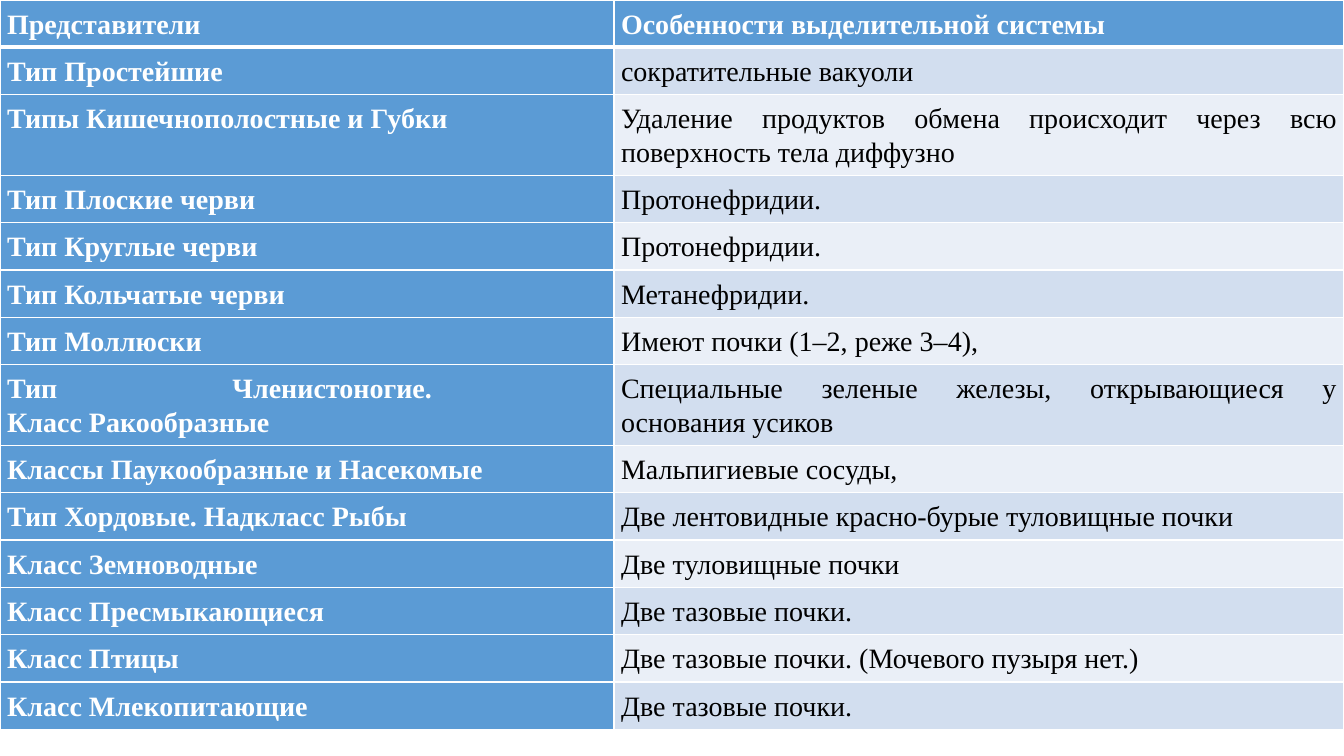
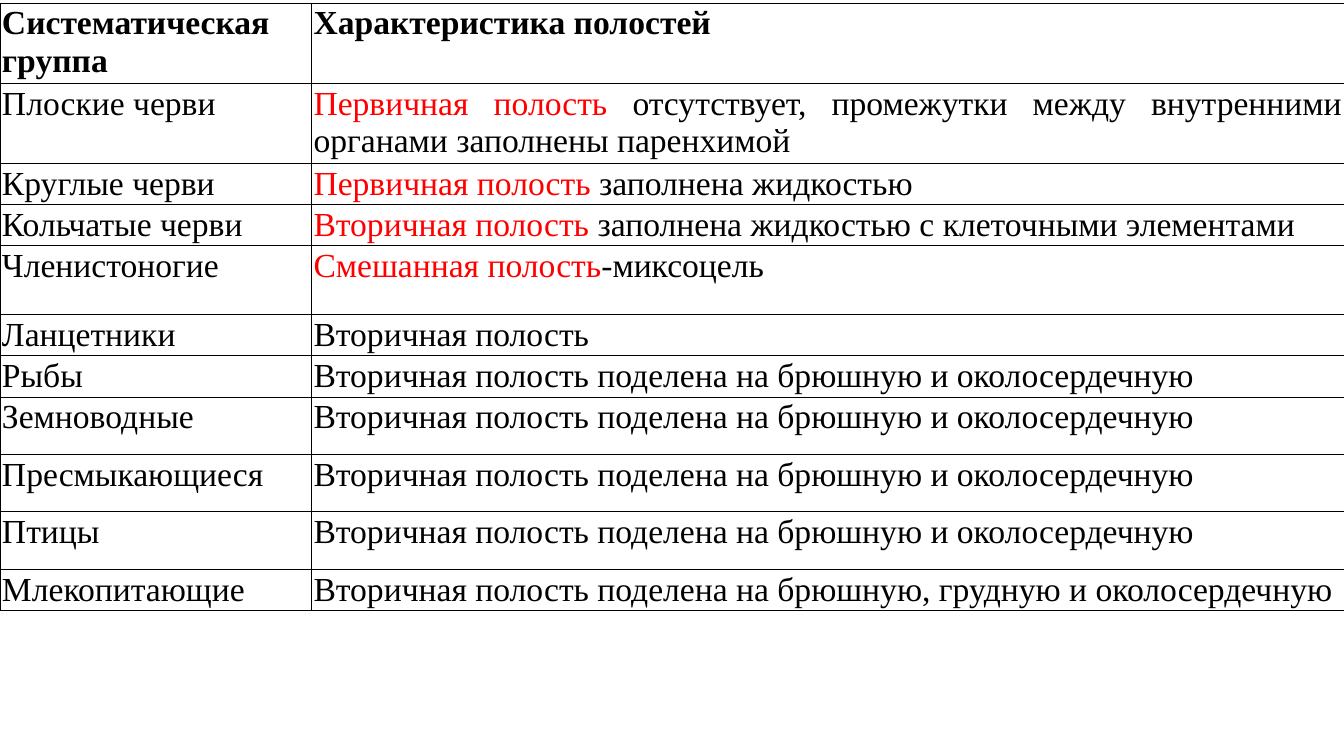
from lxml import etree
from pptx import Presentation
from pptx.dml.color import RGBColor
from pptx.enum.text import PP_ALIGN
from pptx.oxml.ns import qn
from pptx.util import Emu, Pt

EMU_PER_PX = 9144  # 100 px to the inch
SLIDE_WIDTH, SLIDE_HEIGHT = 1333, 750
FONT = "Times New Roman"
LEFT, JUSTIFY = PP_ALIGN.LEFT, PP_ALIGN.JUSTIFY

WHITE = RGBColor(0xFF, 0xFF, 0xFF)
BLACK = RGBColor(0x00, 0x00, 0x00)
RED = RGBColor(0xFF, 0x00, 0x00)
BLUE = RGBColor(0x5B, 0x9B, 0xD5)
BANDS = (RGBColor(0xD2, 0xDE, 0xEF), RGBColor(0xEA, 0xEF, 0xF7))

ONE_LINE, TWO_LINES = 47, 80
EXCRETION = [
    ("Представители", "Особенности выделительной системы", ONE_LINE),
    ("Тип Простейшие", "сократительные вакуоли", ONE_LINE),
    ("Типы Кишечнополостные и Губки",
     "Удаление продуктов обмена происходит через всю поверхность тела диффузно", TWO_LINES),
    ("Тип Плоские черви", "Протонефридии.", ONE_LINE),
    ("Тип Круглые черви", "Протонефридии.", ONE_LINE),
    ("Тип Кольчатые черви", "Метанефридии.", ONE_LINE),
    ("Тип Моллюски", "Имеют почки (1–2, реже 3–4),", ONE_LINE),
    ("Тип Членистоногие. \nКласс Ракообразные",
     "Специальные зеленые железы, открывающиеся у основания усиков", TWO_LINES),
    ("Классы Паукообразные и Насекомые", "Мальпигиевые сосуды,", ONE_LINE),
    ("Тип Хордовые. Надкласс Рыбы", "Две лентовидные красно-бурые туловищные почки", ONE_LINE),
    ("Класс Земноводные", "Две туловищные почки", ONE_LINE),
    ("Класс Пресмыкающиеся", "Две тазовые почки.", ONE_LINE),
    ("Класс Птицы", "Две тазовые почки. (Мочевого пузыря нет.)", ONE_LINE),
    ("Класс Млекопитающие", "Две тазовые почки.", ONE_LINE),
]

DIVIDED = "Вторичная полость поделена на брюшную и околосердечную"
# Group, red opening words, remaining words, row height
CAVITIES = [
    ("Систематическая группа", "", "Характеристика полостей", 80),
    ("Плоские черви", "Первичная полость ",
     "отсутствует, промежутки между внутренними органами заполнены паренхимой", 79),
    ("Круглые черви", "Первичная полость ", "заполнена жидкостью", 41),
    ("Кольчатые черви", "Вторичная полость ",
     "заполнена жидкостью с клеточными элементами", 41),
    ("Членистоногие", "Смешанная полость", "-миксоцель", 68),
    ("Ланцетники", "", "Вторичная полость", 41),
    ("Рыбы", "", DIVIDED, 41),
    ("Земноводные", "", DIVIDED, 57),
    ("Пресмыкающиеся", "", DIVIDED, 57),
    ("Птицы", "", DIVIDED, 57),
    ("Млекопитающие", "", "Вторичная полость поделена на брюшную, грудную и околосердечную", 41),
]


def px(length):
    return Emu(length * EMU_PER_PX)


def write(para, text, *, size, color=BLACK, bold=False, align=JUSTIFY, spacing=None):
    """Append text to the paragraph; a newline becomes a line break."""
    para.alignment = align
    para.line_spacing = spacing
    for number, line in enumerate(text.split("\n")):
        if number:
            para.add_line_break()
        span = para.add_run()
        span.text = line
        span.font.name = FONT
        span.font.size = Pt(size)
        span.font.bold = bold
        span.font.color.rgb = color


class Deck:
    def __init__(self):
        self.deck = Presentation()
        self.deck.slide_width = px(SLIDE_WIDTH)
        self.deck.slide_height = px(SLIDE_HEIGHT)
        self.page = None

    def new_page(self):
        self.page = self.deck.slides.add_slide(self.deck.slide_layouts[6])

    def table(self, top, widths, heights):
        frame = self.page.shapes.add_table(
            len(heights), len(widths), px(0), px(top), px(sum(widths)), px(sum(heights)))
        table = frame.table
        table.first_row = table.horz_banding = False
        for column, width in zip(table.columns, widths):
            column.width = px(width)
        for row, height in zip(table.rows, heights):
            row.height = px(height)
        return table

    def cell(self, cell, *, inset, fill, border, line=1, top=None, bottom=None):
        """Style a cell and return its paragraph; top and bottom override the line width."""
        cell.margin_left = cell.margin_right = px(inset)
        cell.margin_top = cell.margin_bottom = px(inset)
        properties = cell._tc.get_or_add_tcPr()
        sides = {"L": line, "R": line, "T": top or line, "B": bottom or line}
        for side, width in sides.items():
            edge = etree.SubElement(properties, qn(f"a:ln{side}"), w=str(Pt(width)))
            solid = etree.SubElement(edge, qn("a:solidFill"))
            etree.SubElement(solid, qn("a:srgbClr"), val=str(border))
        cell.fill.solid()
        cell.fill.fore_color.rgb = fill
        return cell.text_frame.paragraphs[0]

    def save(self):
        self.deck.save("out.pptx")


def excretion_page(deck):
    deck.new_page()
    table = deck.table(0, (609, 724), [row[-1] for row in EXCRETION])
    for row, (*texts, _) in enumerate(EXCRETION):
        for column, text in enumerate(texts):
            heading = row == 0 or column == 0
            para = deck.cell(
                table.cell(row, column), inset=7, border=WHITE,
                fill=BLUE if heading else BANDS[(row - 1) % 2],
                top=3 if row == 1 else None, bottom=3 if row == 0 else None)
            write(para, text, size=20, bold=heading,
                  color=WHITE if heading else BLACK, spacing=1.07)


def cavities_page(deck):
    deck.new_page()
    table = deck.table(3, (309, 1024), [row[-1] for row in CAVITIES])
    for row, (group, opening, rest, _) in enumerate(CAVITIES):
        name, description = (
            deck.cell(cell, inset=2, fill=WHITE, border=BLACK, line=0.75)
            for cell in table.rows[row].cells)
        write(name, group, size=24, bold=row == 0, align=LEFT)
        if opening:
            write(description, opening, size=24, color=RED)
        write(description, rest, size=24, bold=row == 0)


def main():
    deck = Deck()
    excretion_page(deck)
    cavities_page(deck)
    deck.save()


if __name__ == "__main__":
    main()
